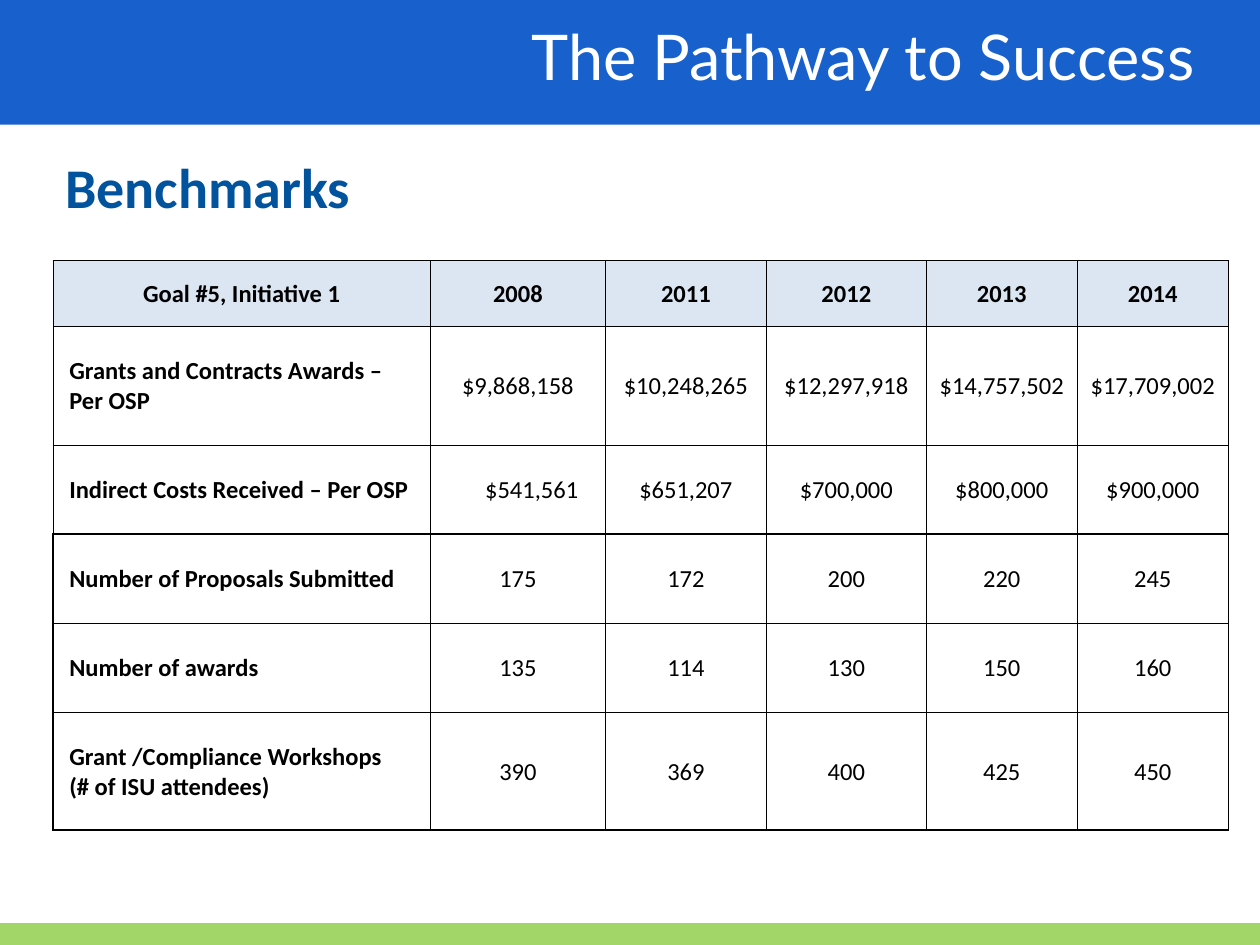
from lxml.etree import SubElement
from pptx import Presentation
from pptx.dml.color import RGBColor
from pptx.enum.shapes import MSO_CONNECTOR as CONN, MSO_SHAPE as SHAPE
from pptx.enum.text import MSO_ANCHOR as ANCHOR, PP_ALIGN as ALIGN
from pptx.oxml.ns import qn
from pptx.util import Inches, Pt

COLS = [3, 1.39, 1.28, 1.27, 1.2, 1.2]
ROWS = [0.52, 0.95, 0.71, 0.71, 0.71, 0.94]
DATA = [
    ["Goal #5, Initiative 1", "2008", "2011", "2012", "2013", "2014"],
    ["Grants and Contracts Awards –\nPer OSP", "$9,868,158", "$10,248,265",
     "$12,297,918", "$14,757,502", "$17,709,002"],
    ["Indirect Costs Received – Per OSP", "$541,561", "$651,207",
     "$700,000", "$800,000", "$900,000"],
    ["Number of Proposals Submitted", "175", "172", "200", "220", "245"],
    ["Number of awards", "135", "114", "130", "150", "160"],
    ["Grant /Compliance Workshops\n(# of ISU attendees)", "390", "369", "400", "425", "450"],
]


def rgb(value):
    """Turn a hex string into a colour."""
    return RGBColor.from_string(value)


def set_font(p, name, size, color, bold=False):
    """Format the font of a whole paragraph."""
    f = p.font
    f.name, f.size, f.bold = name, Pt(size), bold
    f.color.rgb = rgb(color)


def place(sp, box):
    """Move a shape to a box given in inches."""
    sp.left, sp.top, sp.width, sp.height = map(Inches, box)


def add_header(s, box):
    """Draw the blue banner with the slide title on it."""
    x, y, w, h = box
    sp = s.shapes.add_shape(SHAPE.RECTANGLE, *map(Inches, box))
    sp.shadow.inherit = False
    sp.fill.solid()
    sp.fill.fore_color.rgb = rgb("0F5BCB")
    color = sp.fill._xPr.find(qn("a:solidFill"))[0]
    SubElement(color, qn("a:alpha"), val="96000")
    sp.line.fill.background()
    title = s.shapes.title
    place(title, (x + 0.08, y + 0.08, w * 0.95, h * 0.72))
    s.shapes._spTree.append(title._element)
    tf = title.text_frame
    tf.text = "The Pathway to Success"
    tf.vertical_anchor = ANCHOR.MIDDLE
    p = tf.paragraphs[0]
    p.alignment = ALIGN.RIGHT
    set_font(p, "Lato", 36, "FFFFFF")


def add_subtitle(s, box):
    """Write the heading above the table."""
    tf = s.shapes.add_textbox(*map(Inches, box)).text_frame
    tf.word_wrap = True
    tf.text = "Benchmarks"
    p = tf.paragraphs[0]
    p.line_spacing = Pt(32)
    set_font(p, "Calibri", 32, "00539C", True)


def set_borders(cell, width, bottom):
    """Give a cell black borders, with its own width at the bottom."""
    tc_pr = cell._tc.get_or_add_tcPr()
    for side in "LRTB":
        points = bottom if side == "B" else width
        ln = SubElement(tc_pr, qn(f"a:ln{side}"), w=str(Pt(points)))
        fill = SubElement(ln, qn("a:solidFill"))
        SubElement(fill, qn("a:srgbClr"), val="000000")


def fill_cell(cell, text, row, col):
    """Write and format one table cell."""
    is_head, is_label = row == 0, row > 0 and col == 0
    set_borders(cell, 0.5 if row < 3 else 1, 0.5 if row < 2 else 1)
    if is_head:
        cell.fill.solid()
        cell.fill.fore_color.rgb = rgb("DCE6F2")
    else:
        cell.fill.background()
    cell.vertical_anchor = ANCHOR.MIDDLE
    cell.margin_left = Inches(0.13 if is_label else 0.23 if (row, col) == (2, 1) else 0.01)
    cell.margin_right = cell.margin_top = Inches(0.01)
    cell.margin_bottom = 0
    cell.text_frame.text = text
    for p in cell.text_frame.paragraphs:
        p.alignment = ALIGN.LEFT if is_label else ALIGN.CENTER
        set_font(p, "Calibri", 14, "000000", is_head or is_label)


def add_benchmarks(s, box):
    """Build the table of benchmarks, scaled to its box."""
    x, y, w, h = box
    table = s.shapes.add_table(len(ROWS), len(COLS), *map(Inches, box)).table
    for column, share in zip(table.columns, COLS):
        column.width = Inches(w * share / sum(COLS))
    for row, share in zip(table.rows, ROWS):
        row.height = Inches(h * share / sum(ROWS))
    for i, texts in enumerate(DATA):
        for j, text in enumerate(texts):
            fill_cell(table.cell(i, j), text, i, j)


def add_footer(s, box):
    """Draw the green rule along the middle of its box."""
    x, y, w, h = box
    mid = y + h / 2
    line = s.shapes.add_connector(CONN.STRAIGHT, *map(Inches, (x + w, mid, x, mid)))
    line.line.color.rgb = rgb("A2D668")
    line.line.width = Pt(14)
    SubElement(line._element.spPr, qn("a:effectLst"))


def main():
    """Build and save the slide."""
    prs = Presentation()
    prs.slide_width, prs.slide_height = Inches(10), Inches(7.5)
    s = prs.slides.add_slide(prs.slide_layouts[5])
    add_footer(s, (0, 7.34, 10, 0.16))
    add_header(s, (0, 0, 10, 0.99))
    add_subtitle(s, (0.42, 1.25, 5.5, 0.56))
    add_benchmarks(s, (0.42, 2.07, 9.33, 4.52))
    prs.save("out.pptx")


if __name__ == "__main__":
    main()
